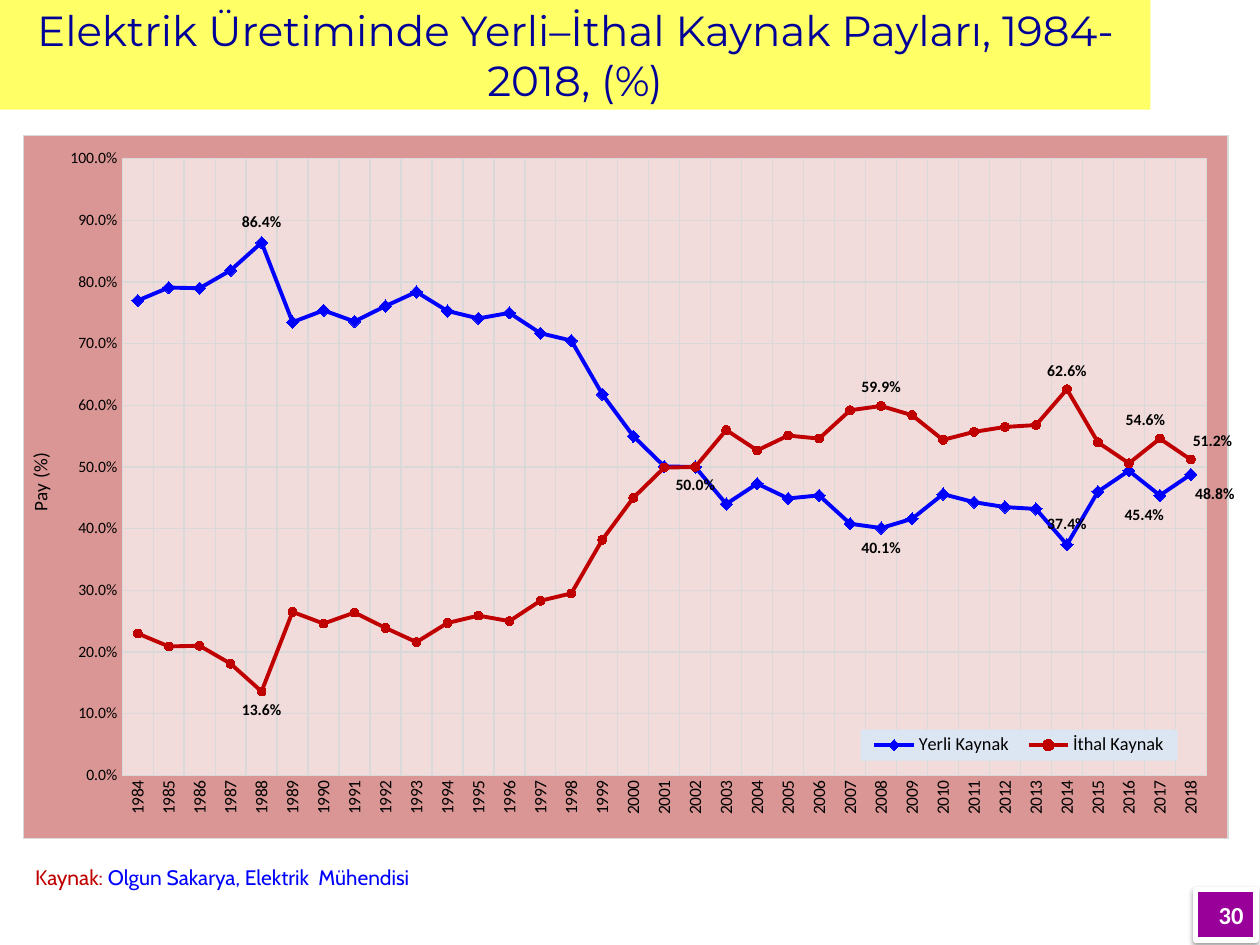
"""Build the slide on domestic and imported shares of electricity generation."""
from dataclasses import dataclass
from typing import Any

import pptx
import pptx.chart.data
import pptx.dml.color
import pptx.enum.chart
import pptx.enum.shapes
import pptx.enum.text
import pptx.oxml
import pptx.oxml.ns
import pptx.util

Cm, Pt = pptx.util.Cm, pptx.util.Pt
ABOVE = pptx.enum.chart.XL_LABEL_POSITION.ABOVE
BELOW = pptx.enum.chart.XL_LABEL_POSITION.BELOW
ALIGN = pptx.enum.text.PP_ALIGN
MARKER = pptx.enum.chart.XL_MARKER_STYLE

COLORS = {
    "black": "000000", "white": "FFFFFF", "navy": "000099", "yellow": "FFFF66",
    "purple": "990099", "blue": "0000FF", "red": "C00000", "grid": "D9D9D9",
    "frame": "D99694", "plot": "F2DCDB", "legend": "DCE6F2",
}
NS = pptx.oxml.ns.nsdecls("a", "c")


@dataclass
class Run:
    text: str
    font: str
    size: float
    color: str
    bold: bool = False


@dataclass
class Box:
    at: tuple[float, float, float, float]
    runs: list[Run]
    align: Any
    fill: str = ""
    border: str = ""


@dataclass
class Callout:
    point: int
    side: Any
    shift: float = 0


@dataclass
class Share:
    name: str
    color: str
    marker: Any
    size: int
    values: list[float]
    callouts: list[Callout]


BOXES = [
    Box((0.46, 17.3, 16.28, 0.76),
        [Run("Kaynak: ", "Cabin", 12, "red"),
         Run("Olgun Sakarya, Elektrik  Mühendisi", "Cabin", 12, "blue")], ALIGN.LEFT),
    Box((24.1, 17.93, 1.22, 1.02), [Run("30", "Calibri", 14, "white", True)],
        ALIGN.RIGHT, "purple", "white"),
    Box((0, 0, 23.19, 2.21),
        [Run("Elektrik Üretiminde Yerli–İthal Kaynak Payları, 1984-2018, (%)",
             "Montserrat", 24, "navy")], ALIGN.CENTER, "yellow"),
]
SHARES = [
    Share("Yerli Kaynak", "blue", MARKER.DIAMOND, 7,
          [0.770, 0.791, 0.790, 0.819, 0.864, 0.735, 0.754, 0.736, 0.761, 0.784, 0.753, 0.741,
           0.750, 0.717, 0.705, 0.618, 0.550, 0.501, 0.500, 0.440, 0.473, 0.449, 0.454, 0.408,
           0.401, 0.416, 0.456, 0.443, 0.435, 0.432, 0.374, 0.460, 0.494, 0.454, 0.488],
          [Callout(4, ABOVE), Callout(24, BELOW), Callout(30, ABOVE),
           Callout(33, BELOW, -0.013), Callout(34, BELOW, 0.02)]),
    Share("İthal Kaynak", "red", MARKER.CIRCLE, 5,
          [0.230, 0.209, 0.210, 0.181, 0.136, 0.265, 0.246, 0.264, 0.239, 0.216, 0.247, 0.259,
           0.250, 0.283, 0.295, 0.382, 0.450, 0.499, 0.500, 0.560, 0.527, 0.551, 0.546, 0.592,
           0.599, 0.584, 0.544, 0.557, 0.565, 0.568, 0.626, 0.540, 0.506, 0.546, 0.512],
          [Callout(4, BELOW), Callout(18, BELOW), Callout(24, ABOVE), Callout(30, ABOVE),
           Callout(33, ABOVE, -0.012), Callout(34, ABOVE, 0.018)]),
]


def assign(obj: Any, **values: Any) -> None:
    """Set every given attribute on the object."""
    for name, value in values.items():
        setattr(obj, name, value)


def rgb(name: str) -> Any:
    """Return the named colour."""
    return pptx.dml.color.RGBColor.from_string(COLORS[name])


def style(font: Any, size: float, color: str = "black", name: str = "Calibri",
          bold: bool = False) -> None:
    """Format a font."""
    assign(font, size=Pt(size), name=name, bold=bold)
    font.color.rgb = rgb(color)


def paint(fill: Any, color: str) -> None:
    """Fill with a solid colour."""
    fill.solid()
    fill.fore_color.rgb = rgb(color)


def stroke(line: Any, color: str, width: float) -> None:
    """Colour a line and set its width."""
    paint(line.fill, color)
    line.width = Pt(width)


def layout(**sizes: float) -> Any:
    """Return a manual chart layout."""
    inner = '<c:layoutTarget val="inner"/>' if sizes.pop("inner", 0) else ""
    modes = '<c:xMode val="edge"/><c:yMode val="edge"/>' if "w" in sizes else ""
    parts = "".join(f'<c:{k} val="{v}"/>' for k, v in sizes.items())
    return pptx.oxml.parse_xml(
        f"<c:layout {NS}><c:manualLayout>{inner}{modes}{parts}</c:manualLayout></c:layout>")


def area(fill: str, border: str = "") -> Any:
    """Return chart area properties with a fill and an optional border."""
    def solid(color: str) -> str:
        return f'<a:solidFill><a:srgbClr val="{COLORS[color]}"/></a:solidFill>'
    line = solid(border) if border else "<a:noFill/>"
    return pptx.oxml.parse_xml(
        f'<c:spPr {NS}>{solid(fill)}<a:ln w="{Pt(0.75)}">{line}</a:ln></c:spPr>')


def add_box(s: Any, box: Box) -> None:
    """Add a text box or a filled rectangle with text."""
    at = [Cm(v) for v in box.at]
    if box.fill:
        sp = s.shapes.add_shape(pptx.enum.shapes.MSO_SHAPE.RECTANGLE, *at)
        sp.shadow.inherit = False
        paint(sp.fill, box.fill)
        sp.line.fill.background()
        sp.text_frame.vertical_anchor = pptx.enum.text.MSO_ANCHOR.MIDDLE
    else:
        sp = s.shapes.add_textbox(*at)
    if box.border:
        stroke(sp.line, box.border, 3)
        effects = sp._element.spPr.find(pptx.oxml.ns.qn("a:effectLst"))
        effects.append(pptx.oxml.parse_xml(
            f'<a:outerShdw {NS} blurRad="{Pt(3.1)}" dist="{Pt(1.6)}" dir="5400000">'
            '<a:srgbClr val="000000"><a:alpha val="38000"/></a:srgbClr></a:outerShdw>'))
    tf = sp.text_frame
    tf.word_wrap = True
    p = tf.paragraphs[0]
    p.alignment = box.align
    for run in box.runs:
        r = p.add_run()
        r.text = run.text
        style(r.font, run.size, run.color, run.font, run.bold)


def format_series(series: Any, share: Share) -> None:
    """Format one line, its markers and its labelled points."""
    series.smooth = False
    stroke(series.format.line, share.color, 2.25)
    assign(series.marker, style=share.marker, size=share.size)
    paint(series.marker.format.fill, share.color)
    stroke(series.marker.format.line, share.color, 0.75)
    series.data_labels.show_value = False
    for callout in share.callouts:
        label = series.points[callout.point].data_label
        style(label.font, 9, bold=True)
        label.position = callout.side
        if callout.shift:
            node = series._element.xpath(f'.//c:dLbl[c:idx/@val="{callout.point}"]')[0]
            node.insert(1, layout(x=callout.shift, y=0))


def add_share_chart(s: Any) -> None:
    """Add the line chart of both shares."""
    data = pptx.chart.data.CategoryChartData(number_format="0.0%")
    data.categories = [str(year) for year in range(1984, 2019)]
    for share in SHARES:
        data.add_series(share.name, share.values)
    chart = s.shapes.add_chart(pptx.enum.chart.XL_CHART_TYPE.LINE_MARKERS, Cm(0.46), Cm(2.72),
                               Cm(24.43), Cm(14.2), data).chart
    assign(chart, has_title=False, has_legend=True)
    style(chart.font, 10)
    chart.plots[0].vary_by_categories = False
    for series, share in zip(chart.plots[0].series, SHARES):
        format_series(series, share)

    cat, val = chart.category_axis, chart.value_axis
    for axis, size in ((cat, 10), (val, 9)):
        assign(axis, has_major_gridlines=True, major_tick_mark=pptx.enum.chart.XL_TICK_MARK.NONE)
        stroke(axis.major_gridlines.format.line, "grid", 0.75)
        style(axis.tick_labels.font, size)
    stroke(cat.format.line, "grid", 0.75)
    val.format.line.fill.background()
    assign(val, minimum_scale=0, maximum_scale=1, major_unit=0.1)
    assign(val.tick_labels, number_format="0.0%", number_format_is_linked=False)
    tf = val.axis_title.text_frame
    tf.text = "Pay (%)"
    style(tf.paragraphs[0].runs[0].font, 11)
    for body in cat._element.xpath("c:txPr/a:bodyPr") + val._element.xpath("c:title//a:bodyPr"):
        body.set("rot", "-5400000")
        body.set("vert", "horz")

    legend = chart.legend
    assign(legend, position=pptx.enum.chart.XL_LEGEND_POSITION.TOP, include_in_layout=False)
    style(legend.font, 10.5)
    node = legend._element
    plot = chart._chartSpace.xpath("c:chart/c:plotArea")[0]
    for parent in (node, plot):
        for old in parent.xpath("c:layout"):
            parent.remove(old)
    node.insert(1, layout(x=0.695, y=0.845, w=0.263, h=0.044))
    node.xpath("c:txPr")[0].addprevious(area("legend"))
    plot.insert(0, layout(inner=1, x=0.082, y=0.033, w=0.9, h=0.877))
    plot.append(area("plot", "grid"))
    chart._chartSpace.xpath("c:chart")[0].addnext(area("frame", "grid"))


def main() -> None:
    """Build and save the presentation."""
    prs = pptx.Presentation()
    assign(prs, slide_width=Cm(25.4), slide_height=Cm(19.05))
    s = prs.slides.add_slide(prs.slide_layouts[6])
    for box in BOXES:
        add_box(s, box)
    add_share_chart(s)
    prs.save("out.pptx")


if __name__ == "__main__":
    main()
